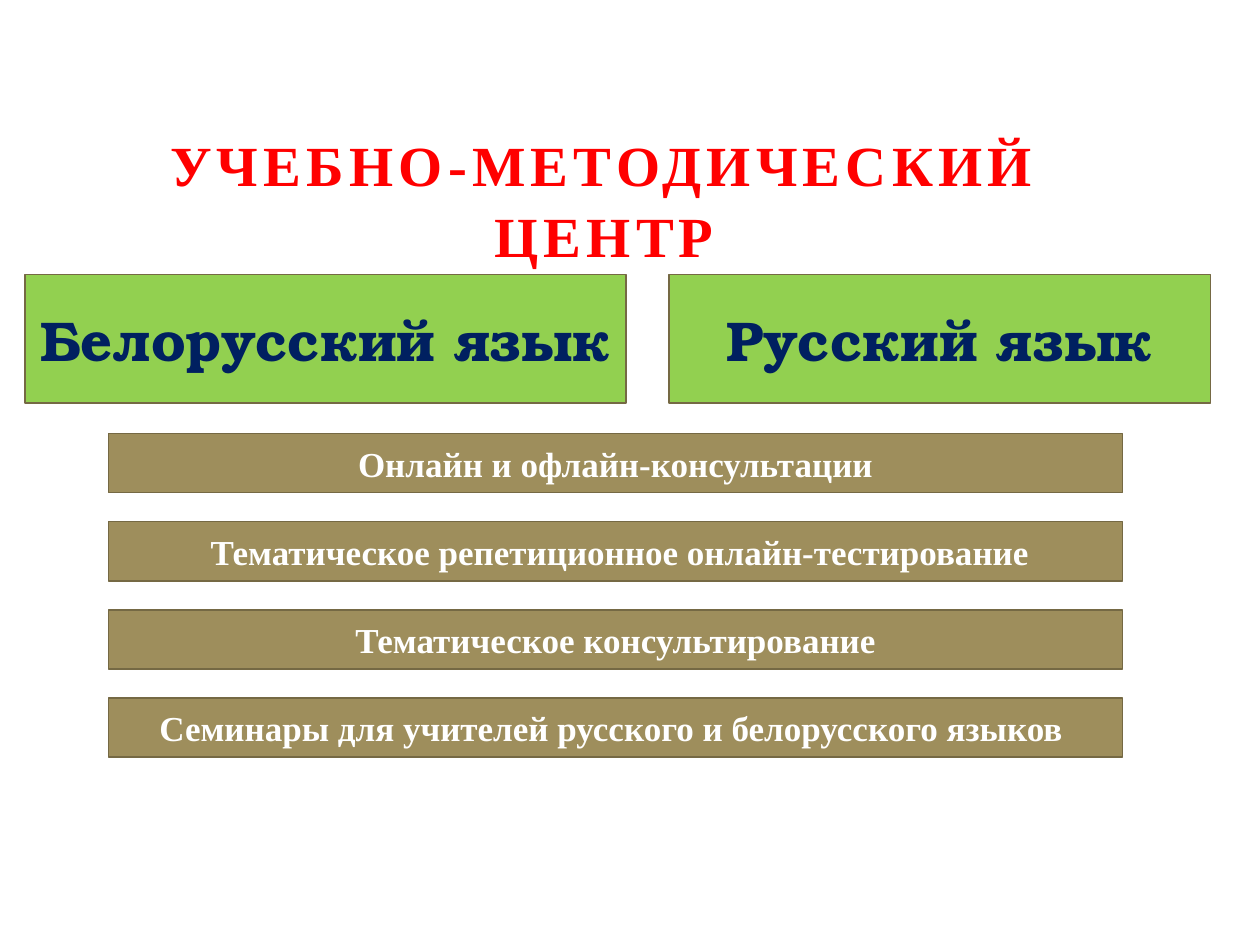
from dataclasses import dataclass

import pptx
import pptx.dml.color
import pptx.enum.shapes
import pptx.enum.text
import pptx.util
from pptx.util import Inches

SERIF = "Times New Roman"


@dataclass
class Style:
    font: str
    size: float
    color: str
    fill: str = ""


TITLE = Style(SERIF, 32.4, "FF0000")
TONGUE = Style("TeX Gyre Bonum", 32, "002060", "92D050")
TASK = Style(SERIF, 20, "FFFFFF", "9E8E5C")

TONGUES = [("Белорусский язык", 0.2, 4.77), ("Русский язык", 5.31, 4.3)]
TASKS = [
    "Онлайн и офлайн-консультации",
    " Тематическое репетиционное онлайн-тестирование",
    "Тематическое консультирование",
    "Семинары для учителей русского и белорусского языков ",
]


def rgb(code: str):
    return pptx.dml.color.RGBColor.from_string(code)


def write(shape, text: str, style: Style):
    """Put one centred bold run into the shape and return the run."""
    shape.text_frame.word_wrap = True
    para = shape.text_frame.paragraphs[0]
    para.alignment = pptx.enum.text.PP_ALIGN.CENTER
    run = para.add_run()
    run.text = text
    run.font.name = style.font
    run.font.size = pptx.util.Pt(style.size)
    run.font.bold = True
    run.font.color.rgb = rgb(style.color)
    return run


def add_title(slide, text: str) -> None:
    box = slide.shapes.add_textbox(
        Inches(0.98), Inches(1.47), Inches(7.63), Inches(0.71))
    run = write(box, text, TITLE)
    run._r.get_or_add_rPr().set("spc", "300")
    box.text_frame.paragraphs[0].line_spacing = 1.04
    box.text_frame.vertical_anchor = pptx.enum.text.MSO_ANCHOR.BOTTOM


def add_bar(slide, text: str, left: float, top: float,
            width: float, height: float, style: Style) -> None:
    bar = slide.shapes.add_shape(
        pptx.enum.shapes.MSO_SHAPE.RECTANGLE,
        Inches(left), Inches(top), Inches(width), Inches(height))
    bar.shadow.inherit = False
    bar.fill.solid()
    bar.fill.fore_color.rgb = rgb(style.fill)
    bar.line.color.rgb = rgb("756944")
    bar.line.width = pptx.util.Pt(0.85)
    bar.text_frame.vertical_anchor = pptx.enum.text.MSO_ANCHOR.MIDDLE
    write(bar, text, style)


def main() -> None:
    deck = pptx.Presentation()
    deck.slide_width, deck.slide_height = Inches(10), Inches(7.5)
    slide = deck.slides.add_slide(deck.slide_layouts[6])

    add_title(slide, "УЧЕБНО-МЕТОДИЧЕСКИЙ ЦЕНТР")
    for text, left, width in TONGUES:
        add_bar(slide, text, left, 2.18, width, 1.02, TONGUE)
    for row, text in enumerate(TASKS):
        add_bar(slide, text, 0.86, 3.44 + 0.7 * row, 8.05, 0.47, TASK)

    deck.save("out.pptx")


if __name__ == "__main__":
    main()
